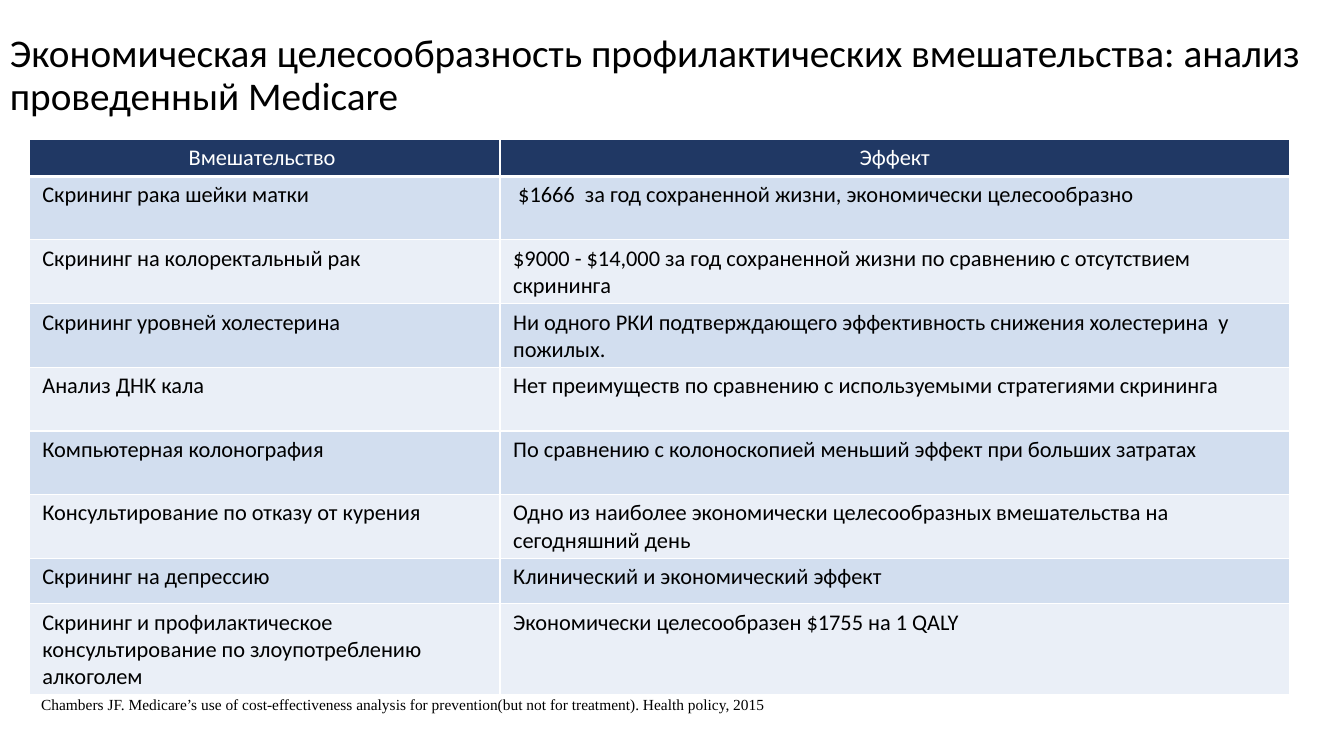
import pptx
import pptx.dml.color
import pptx.enum.text
import pptx.oxml
import pptx.oxml.ns
import pptx.util
from pptx.util import Inches

COLORS = {
    "text": "000000",
    "white": "FFFFFF",
    "header": "203864",
    "band_dark": "D2DEEF",
    "band_light": "EAEFF7",
}

TITLE = ("Экономическая целесообразность профилактических вмешательства: "
         "анализ проведенный Medicare")
CITATION = ("Chambers JF. Medicare’s use of cost-effectiveness analysis for "
            "prevention(but not for treatment). Health policy, 2015")
INTERVENTIONS = [
    ("Вмешательство ", "Эффект"),
    ("Скрининг рака шейки матки",
     " $1666  за год сохраненной жизни, экономически целесообразно"),
    ("Скрининг на колоректальный рак",
     "$9000 - $14,000 за год сохраненной жизни по сравнению с отсутствием скрининга"),
    ("Скрининг уровней холестерина",
     "Ни одного РКИ подтверждающего эффективность снижения холестерина  у пожилых."),
    ("Анализ ДНК кала",
     "Нет преимуществ по сравнению с используемыми стратегиями скрининга"),
    ("Компьютерная колонография",
     "По сравнению с колоноскопией меньший эффект при больших затратах"),
    ("Консультирование по отказу от курения",
     "Одно из наиболее экономически целесообразных вмешательства на сегодняшний день"),
    ("Скрининг на депрессию", "Клинический и экономический эффект"),
    ("Скрининг и профилактическое консультирование по злоупотреблению алкоголем",
     "Экономически целесообразен $1755 на 1 QALY"),
]
COLUMN_WIDTHS = [4.67, 7.83]
ROW_HEIGHTS = [0.37] + [0.63] * 6 + [0.45, 0.9]


class SlideBuilder:
    """Holds the shared style and the slide being filled."""

    body_font = "Calibri"
    table_size = 16

    def __init__(self, slide):
        self.slide = slide

    def style_text(self, paragraph, size, color, font=None):
        for run in paragraph.runs:
            run.font.name = font or self.body_font
            run.font.size = pptx.util.Pt(size)
            run.font.bold = False
            run.font.color.rgb = pptx.dml.color.RGBColor.from_string(COLORS[color])

    def text(self, box, content, size, font=None, wrap=True, line_spacing=None,
             anchor=pptx.enum.text.MSO_ANCHOR.TOP):
        frame = self.slide.shapes.add_textbox(*map(Inches, box)).text_frame
        frame.word_wrap = wrap
        frame.vertical_anchor = anchor
        frame.text = content
        paragraph = frame.paragraphs[0]
        paragraph.line_spacing = line_spacing
        self.style_text(paragraph, size, "text", font)

    def cell_borders(self, cell, bottom_width):
        properties = cell._tc.get_or_add_tcPr()
        widths = {"lnL": 1, "lnR": 1, "lnT": 1, "lnB": bottom_width}
        for position, (side, width) in enumerate(widths.items()):
            properties.insert(position, pptx.oxml.parse_xml(
                f'<a:{side} {pptx.oxml.ns.nsdecls("a")} w="{pptx.util.Pt(width)}">'
                f'<a:solidFill><a:srgbClr val="{COLORS["white"]}"/></a:solidFill>'
                f'</a:{side}>'))

    def cell(self, cell, content, fill, is_header):
        cell.margin_left = cell.margin_right = Inches(0.13)
        cell.margin_top = cell.margin_bottom = Inches(0.05)
        cell.fill.solid()
        cell.fill.fore_color.rgb = pptx.dml.color.RGBColor.from_string(COLORS[fill])
        self.cell_borders(cell, 3 if is_header else 1)
        cell.text = content
        paragraph = cell.text_frame.paragraphs[0]
        if is_header:
            paragraph.alignment = pptx.enum.text.PP_ALIGN.CENTER
        self.style_text(paragraph, self.table_size, "white" if is_header else "text")

    def table(self, left, top, rows, widths, heights):
        """Add a table with a dark header and alternating row bands."""
        table = self.slide.shapes.add_table(
            len(rows), len(widths), Inches(left), Inches(top),
            Inches(sum(widths)), Inches(sum(heights))).table
        for column, width in zip(table.columns, widths):
            column.width = Inches(width)
        for index, (row, height) in enumerate(zip(rows, heights)):
            table.rows[index].height = Inches(height)
            is_header = index == 0
            band = "band_dark" if index % 2 else "band_light"
            for column, content in enumerate(row):
                self.cell(table.cell(index, column), content,
                          "header" if is_header else band, is_header)


def main():
    deck = pptx.Presentation()
    deck.slide_width, deck.slide_height = Inches(13.33), Inches(7.5)
    builder = SlideBuilder(deck.slides.add_slide(deck.slide_layouts[6]))
    builder.text((0, 0.13, 13.07, 1.25), TITLE, 28, line_spacing=0.9,
                 anchor=pptx.enum.text.MSO_ANCHOR.MIDDLE)
    builder.table(0.29, 1.38, INTERVENTIONS, COLUMN_WIDTHS, ROW_HEIGHTS)
    builder.text((0.31, 6.85, 7.44, 0.29), CITATION, 11,
                 font="Times New Roman", wrap=False)
    deck.save("out.pptx")


if __name__ == "__main__":
    main()
